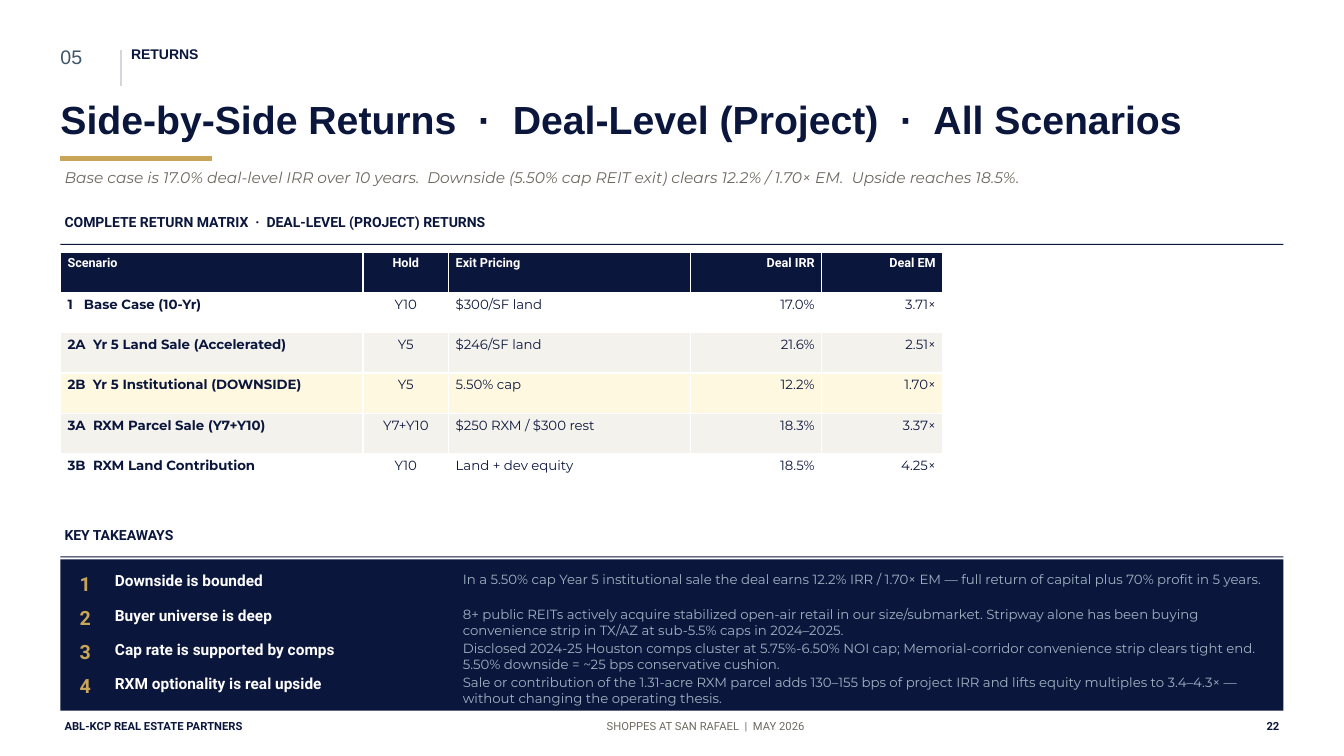
from lxml import etree
from pptx import Presentation
from pptx.dml.color import RGBColor
from pptx.enum.shapes import MSO_CONNECTOR as Connector, MSO_SHAPE as Preset
from pptx.enum.text import MSO_AUTO_SIZE as AutoSize, PP_ALIGN as Align
from pptx.oxml.ns import qn
from pptx.util import Inches, Pt

COLORS = {
    "navy": "0B163C", "gold": "C9A557", "slate": "3E5668", "rule": "D4D6DC",
    "gray": "6E6A61", "mist": "A0B4C3", "white": "FFFFFF",
    "band": "F4F2ED", "highlight": "FFF8E0",
}
LEFT, WIDTH = 0.6, 12.13
FLUSH, PADDED, CELL = (0, 0), (0.04, 0.02), (0.07, 0.04)


def color(name):
    return RGBColor.from_string(COLORS[name])


class SlideBuilder:
    formats = {
        "number": {"name": "Arial", "size": 14, "color": "slate"},
        "section": {"name": "Arial", "size": 10, "color": "navy", "bold": True},
        "title": {"name": "Arial", "size": 28, "color": "navy", "bold": True},
        "subtitle": {"name": "Montserrat", "size": 11, "color": "gray", "italic": True},
        "heading": {"name": "Roboto", "size": 10, "color": "navy", "bold": True},
        "table_head": {"name": "Roboto", "size": 9, "color": "white", "bold": True},
        "row_label": {"name": "Montserrat", "size": 9.5, "color": "navy", "bold": True},
        "cell": {"name": "Montserrat", "size": 9.5, "color": "navy", "bold": False},
        "rank": {"name": "Roboto", "size": 14, "color": "gold", "bold": True},
        "takeaway": {"name": "Roboto", "size": 11, "color": "white", "bold": True},
        "detail": {"name": "Montserrat", "size": 9.5, "color": "mist"},
        "footer": {"name": "Roboto", "size": 8, "color": "gray"},
        "footer_bold": {"name": "Roboto", "size": 8, "color": "navy", "bold": True},
    }

    def __init__(self, slide):
        self.slide = slide

    def fill_text(self, holder, frame, text, style, align, insets):
        horizontal, vertical = map(Inches, insets)
        margins = {"margin_left": horizontal, "margin_right": horizontal,
                   "margin_top": vertical, "margin_bottom": vertical}
        for key, value in margins.items():
            setattr(holder, key, value)
        paragraph = frame.paragraphs[0]
        paragraph.alignment = align
        run = paragraph.add_run()
        run.text = text
        for key, value in self.formats[style].items():
            if key == "color":
                run.font.color.rgb = color(value)
            else:
                setattr(run.font, key, Pt(value) if key == "size" else value)

    def text(self, box, text, style, align=Align.LEFT, insets=PADDED):
        frame = self.slide.shapes.add_textbox(*map(Inches, box)).text_frame
        frame.word_wrap = True
        frame.auto_size = AutoSize.SHAPE_TO_FIT_TEXT
        self.fill_text(frame, frame, text, style, align, insets)

    def bar(self, box, fill, outline=None):
        shape = self.slide.shapes.add_shape(Preset.RECTANGLE, *map(Inches, box))
        shape.shadow.inherit = False
        shape.fill.solid()
        shape.fill.fore_color.rgb = color(fill)
        if outline:
            shape.line.color.rgb = color(fill)
            shape.line.width = Pt(outline)
        else:
            shape.line.fill.background()

    def line(self, start, end, stroke, width):
        connector = self.slide.shapes.add_connector(
            Connector.STRAIGHT, *map(Inches, (*start, *end)))
        connector.line.color.rgb = color(stroke)
        connector.line.width = Pt(width)
        etree.SubElement(connector._element.spPr, qn("a:effectLst"))

    def heading(self, top, text):
        self.text((LEFT, top, 10, 0.3), text, "heading")
        self.bar((LEFT, top + 0.32, WIDTH, 0.01), "navy")

    def table(self, box, widths, aligns, rows, fills):
        table = self.slide.shapes.add_table(
            len(rows), len(widths), *map(Inches, box)).table
        for column, width in zip(table.columns, widths):
            column.width = Inches(width)
        for row_index, (values, fill) in enumerate(zip(rows, fills)):
            for column_index, value in enumerate(values):
                cell = table.cell(row_index, column_index)
                cell.fill.solid()
                cell.fill.fore_color.rgb = color(fill)
                if row_index == 0:
                    style = "table_head"
                else:
                    style = "cell" if column_index else "row_label"
                self.fill_text(cell, cell.text_frame, value, style,
                               aligns[column_index], CELL)


RETURNS = [
    ("Scenario", "Hold", "Exit Pricing", "Deal IRR", "Deal EM"),
    ("1   Base Case (10-Yr)", "Y10", "$300/SF land", "17.0%", "3.71×"),
    ("2A  Yr 5 Land Sale (Accelerated)", "Y5", "$246/SF land", "21.6%", "2.51×"),
    ("2B  Yr 5 Institutional (DOWNSIDE)", "Y5", "5.50% cap", "12.2%", "1.70×"),
    ("3A  RXM Parcel Sale (Y7+Y10)", "Y7+Y10", "$250 RXM / $300 rest", "18.3%", "3.37×"),
    ("3B  RXM Land Contribution", "Y10", "Land + dev equity", "18.5%", "4.25×"),
]
ROW_FILLS = ["navy", "white", "band", "highlight", "band", "white"]
TAKEAWAYS = [
    ("Downside is bounded",
     "In a 5.50% cap Year 5 institutional sale the deal earns 12.2% IRR / 1.70× EM — "
     "full return of capital plus 70% profit in 5 years."),
    ("Buyer universe is deep",
     "8+ public REITs actively acquire stabilized open-air retail in our size/submarket. "
     "Stripway alone has been buying convenience strip in TX/AZ at sub-5.5% caps in 2024–2025."),
    ("Cap rate is supported by comps",
     "Disclosed 2024-25 Houston comps cluster at 5.75%-6.50% NOI cap; Memorial-corridor "
     "convenience strip clears tight end. 5.50% downside = ~25 bps conservative cushion."),
    ("RXM optionality is real upside",
     "Sale or contribution of the 1.31-acre RXM parcel adds 130–155 bps of project IRR and "
     "lifts equity multiples to 3.4–4.3× — without changing the operating thesis."),
]


def main():
    presentation = Presentation()
    presentation.slide_width = Inches(13.33)
    presentation.slide_height = Inches(7.5)
    builder = SlideBuilder(presentation.slides.add_slide(presentation.slide_layouts[6]))

    builder.text((LEFT, 0.45, 0.7, 0.45), "05", "number", insets=FLUSH)
    builder.line((1.2, 0.5), (1.2, 0.85), "rule", 1.5)
    builder.text((1.3, 0.45, 8, 0.4), "RETURNS", "section", insets=FLUSH)
    builder.text((LEFT, 0.95, WIDTH, 0.55),
                 "Side-by-Side Returns  ·  Deal-Level (Project)  ·  All Scenarios",
                 "title", insets=FLUSH)
    builder.bar((LEFT, 1.55, 1.5, 0.04), "gold", 0.5)
    builder.text((LEFT, 1.65, WIDTH, 0.4),
                 "Base case is 17.0% deal-level IRR over 10 years.  Downside (5.50% cap REIT "
                 "exit) clears 12.2% / 1.70× EM.  Upside reaches 18.5%.", "subtitle")

    builder.heading(2.1, "COMPLETE RETURN MATRIX  ·  DEAL-LEVEL (PROJECT) RETURNS")
    builder.table((LEFT, 2.5, WIDTH, 2.4), (3, 0.85, 2.4, 1.3, 1.2),
                  (Align.LEFT, Align.CENTER, Align.LEFT, Align.RIGHT, Align.RIGHT),
                  RETURNS, ROW_FILLS)

    builder.heading(5.2, "KEY TAKEAWAYS")
    builder.bar((LEFT, 5.55, WIDTH, 1.5), "navy")
    for index, (takeaway, detail) in enumerate(TAKEAWAYS):
        top = 5.65 + 0.34 * index
        builder.text((0.75, top, 0.3, 0.3), str(index + 1), "rank")
        builder.text((1.1, top, 3.4, 0.3), takeaway, "takeaway")
        builder.text((4.55, top, 8.05, 0.3), detail, "detail")

    builder.text((LEFT, 7.12, 5, 0.3), "ABL-KCP REAL ESTATE PARTNERS", "footer_bold")
    builder.text((5, 7.12, 4, 0.3), "SHOPPES AT SAN RAFAEL  |  MAY 2026",
                 "footer", Align.CENTER)
    builder.text((11.73, 7.12, 1, 0.3), "22", "footer_bold", Align.RIGHT)
    presentation.save("out.pptx")


if __name__ == "__main__":
    main()
